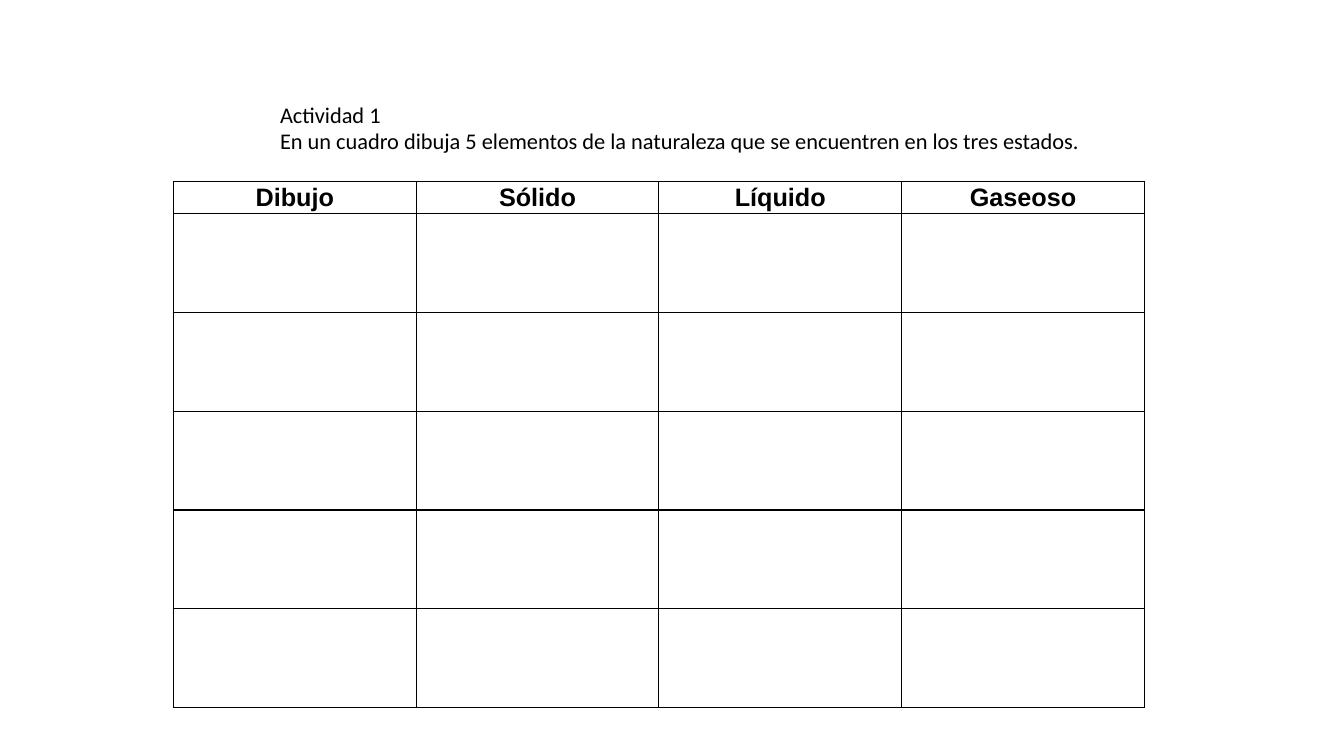
from dataclasses import dataclass

from lxml import etree
from pptx import Presentation
from pptx import util as u
from pptx.dml.color import RGBColor
from pptx.enum import text
from pptx.oxml.ns import qn


@dataclass(frozen=True)
class Theme:
    """Colours, fonts and sizes of the slide."""
    ink: str = "000000"
    body_font: str = "Calibri"
    header_font: str = "Arial"
    body_size: int = 16
    header_size: int = 18
    border_width: int = 1


THEME = Theme()
INSTRUCTIONS = (
    "Actividad 1",
    "En un cuadro dibuja 5 elementos de la naturaleza que se encuentren en los tres estados.",
)
HEADERS = ("Dibujo", "Sólido", "Líquido", "Gaseoso")
DRAWING_ROWS = 5
BODY = {"name": THEME.body_font, "size": u.Pt(THEME.body_size)}
HEADER = {"name": THEME.header_font, "size": u.Pt(THEME.header_size), "bold": True}


def apply_format(target, values):
    """Set every attribute named in a dict of format values."""
    for name, value in values.items():
        setattr(target, name, value)


def write_run(paragraph, words, font_values):
    """Add a formatted run to a paragraph."""
    run = paragraph.add_run()
    run.text = words
    apply_format(run.font, font_values)
    run.font.color.rgb = RGBColor.from_string(THEME.ink)


def add_instructions(slide, lines, left, top, width, height):
    """Add a text box with one paragraph for each line."""
    shape = slide.shapes.add_textbox(*map(u.Inches, (left, top, width, height)))
    frame = shape.text_frame
    apply_format(frame, {"word_wrap": True, "vertical_anchor": text.MSO_ANCHOR.TOP})
    for index, line in enumerate(lines):
        paragraph = frame.add_paragraph() if index else frame.paragraphs[0]
        write_run(paragraph, line, BODY)


def draw_borders(cell):
    """Draw the four borders of a cell."""
    properties = cell._tc.get_or_add_tcPr()
    for position, side in enumerate(("lnL", "lnR", "lnT", "lnB")):
        line = etree.Element(qn(f"a:{side}"), w=str(u.Pt(THEME.border_width)))
        fill = etree.SubElement(line, qn("a:solidFill"))
        etree.SubElement(fill, qn("a:srgbClr"), val=THEME.ink)
        properties.insert(position, line)


def format_cell(cell):
    """Give a cell its margins, borders and empty fill."""
    side, edge = u.Inches(0.06), u.Inches(0)
    apply_format(cell, {"margin_left": side, "margin_right": side,
                        "margin_top": edge, "margin_bottom": edge})
    cell.fill.background()
    draw_borders(cell)


def add_states_table(slide, left, top, width, header_height, row_height):
    """Add the table of states with a header and empty drawing rows."""
    height = header_height + DRAWING_ROWS * row_height
    table = slide.shapes.add_table(
        DRAWING_ROWS + 1, len(HEADERS),
        *map(u.Inches, (left, top, width, height))).table
    apply_format(table, {"first_row": False, "horz_banding": False})
    for index, row in enumerate(table.rows):
        row.height = u.Inches(row_height if index else header_height)
    for cell in table.iter_cells():
        format_cell(cell)
    for column, header in enumerate(HEADERS):
        paragraph = table.cell(0, column).text_frame.paragraphs[0]
        apply_format(paragraph, {"alignment": text.PP_ALIGN.CENTER, "line_spacing": 1.07})
        write_run(paragraph, header, HEADER)


def main():
    """Build the activity slide and save it."""
    presentation = Presentation()
    apply_format(presentation, {"slide_width": u.Inches(13.33),
                                "slide_height": u.Inches(7.5)})
    slide = presentation.slides.add_slide(presentation.slide_layouts[6])
    add_states_table(slide, 1.72, 1.8, 9.63, 0.32, 0.98)
    add_instructions(slide, INSTRUCTIONS, 2.68, 0.95, 8.23, 0.94)
    presentation.save("out.pptx")


if __name__ == "__main__":
    main()
